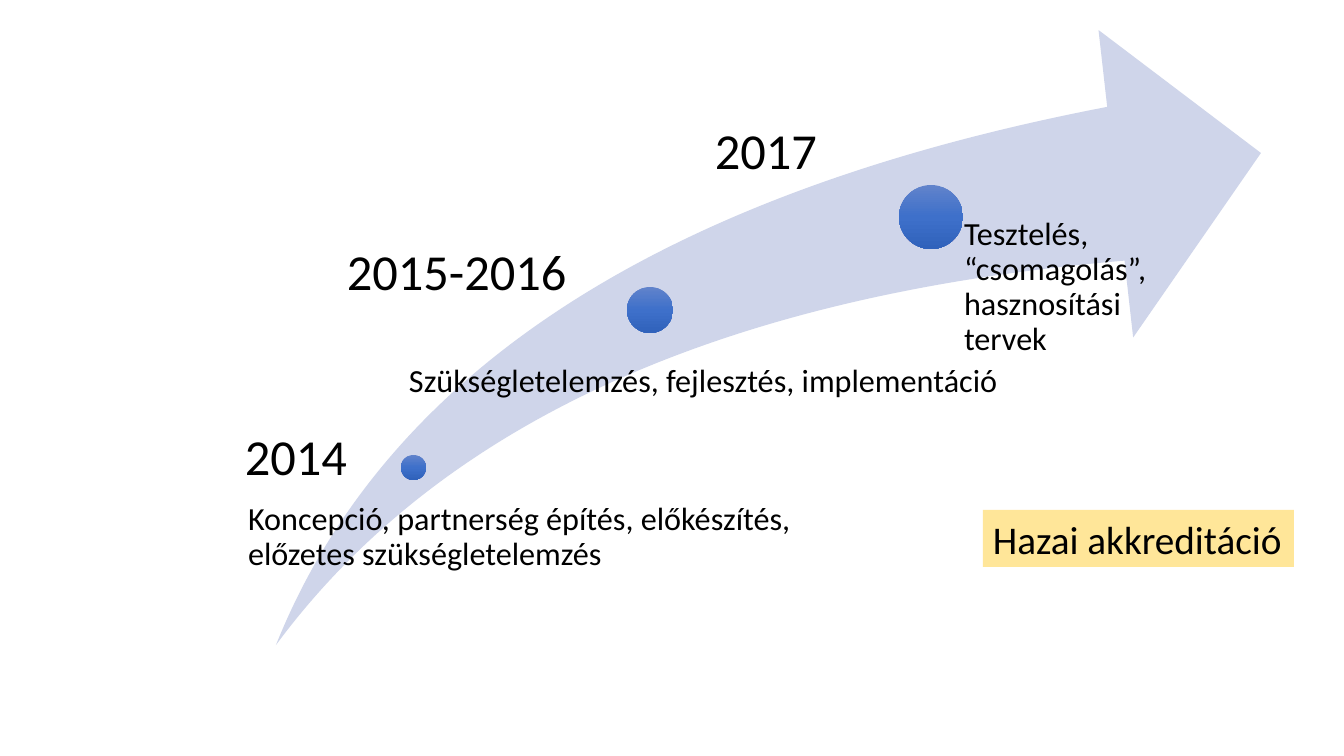
from copy import deepcopy

from pptx import Presentation
from pptx import util as u
from pptx.dml.color import RGBColor
from pptx.enum import shapes, text

PX = 914400 / 100.8  # EMU in one px
INK = {"black": "000000", "swoosh": "CFD5EA", "label": "FFE699",
       "top": "6183CB", "mid": "3E70CA", "low": "3062BB"}
KIND = shapes.MSO_SHAPE


def px(n):
    return u.Emu(round(n * PX))


def rgb(name):
    return RGBColor.from_string(INK[name])


def write(frame, words, size=23, gap=None, inset=None, wrap=True):
    """Put one left-aligned paragraph into a text frame."""
    frame.word_wrap = wrap
    frame.vertical_anchor = text.MSO_ANCHOR.TOP
    if not wrap:
        frame.auto_size = text.MSO_AUTO_SIZE.SHAPE_TO_FIT_TEXT
    if inset is not None:
        frame.margin_left = px(inset)
        frame.margin_top = frame.margin_right = frame.margin_bottom = 0
    para = frame.paragraphs[0]
    para.alignment = text.PP_ALIGN.LEFT
    if gap:
        para.line_spacing = gap
    run = para.add_run()
    run.text = words
    run.font.size = u.Pt(size)
    run.font.name = "Calibri"
    run.font.color.rgb = rgb("black")


class Board:
    def __init__(self, deck):
        self.slide = deck.slides.add_slide(deck.slide_layouts[6])

    def shape(self, kind, box, fill=None):
        item = self.slide.shapes.add_shape(kind, *map(px, box))
        item.shadow.inherit = False
        item.line.fill.background()
        if fill:
            item.fill.solid()
            item.fill.fore_color.rgb = rgb(fill)
        return item

    def dot(self, left, top, size):
        ball = self.shape(KIND.OVAL, (left, top, size, size))
        paint = ball.fill
        paint.gradient()
        paint.gradient_angle = 270
        stops = ball._element.xpath(".//a:gsLst")[0]
        stops.append(deepcopy(stops[-1]))
        for stop, tone, place in zip(paint.gradient_stops,
                                     ("top", "mid", "low"), (0, 0.5, 1)):
            stop.color.rgb = rgb(tone)
            stop.position = place

    def label(self, box, words, **style):
        item = self.slide.shapes.add_textbox(*map(px, box))
        write(item.text_frame, words, **style)


def main():
    deck = Presentation()
    deck.slide_width, deck.slide_height = px(1344), px(756)
    board = Board(deck)

    # Rising arrow
    swoosh = board.shape(KIND.SWOOSH_ARROW, (276, 30, 985, 615), "swoosh")
    swoosh.adjustments[0] = swoosh.adjustments[1] = 0.25

    # Milestones: dot, note box, note inset, note
    steps = [
        ((401, 455, 25), (235, 503, 588, 106), 13,
         "Koncepció, partnerség építés, előkészítés, előzetes szükségletelemzés"),
        ((627, 287, 46), (385, 365, 675, 55), 24,
         "Szükségletelemzés, fejlesztés, implementáció"),
        ((899, 185, 64), (930, 218, 236, 427), 34,
         "Tesztelés, “csomagolás”, hasznosítási tervek"),
    ]
    for dot, box, inset, note in steps:
        board.dot(*dot)
        board.label(box, note, gap=0.9, inset=inset)

    # Years
    for left, top, wide, year in [(235, 420, 124, "2014"),
                                  (337, 235, 242, "2015-2016"),
                                  (705, 114, 124, "2017")]:
        board.label((left, top, wide, 72), year, size=36, wrap=False)

    # Accreditation label
    tag = board.shape(KIND.RECTANGLE, (983, 510, 311, 57), "label")
    write(tag.text_frame, "Hazai akkreditáció", size=28, wrap=False)

    deck.save("out.pptx")


if __name__ == "__main__":
    main()
